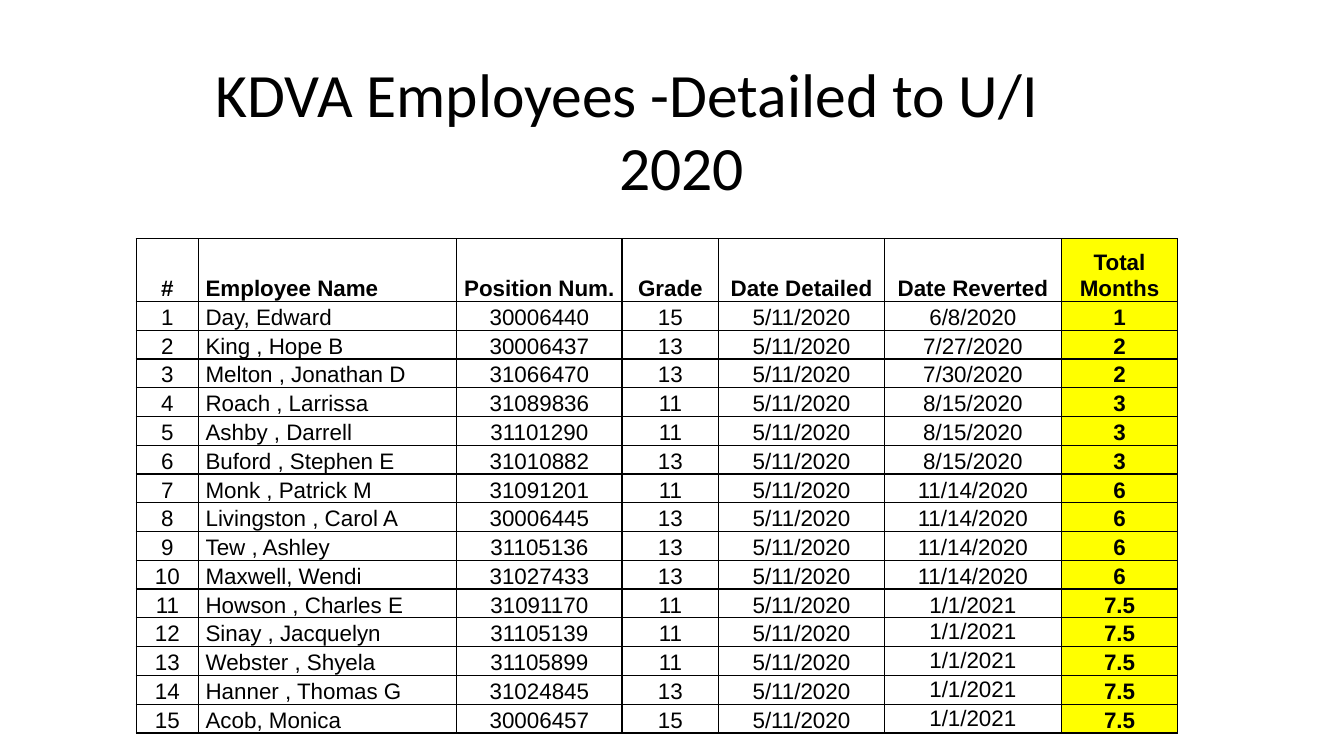
from lxml import etree
from pptx import Presentation
from pptx.dml.color import RGBColor
from pptx.enum.text import MSO_ANCHOR, MSO_AUTO_SIZE, PP_ALIGN
from pptx.oxml.ns import qn
from pptx.util import Inches, Pt

LEFT, CENTER = PP_ALIGN.LEFT, PP_ALIGN.CENTER
TOP, BOTTOM = MSO_ANCHOR.TOP, MSO_ANCHOR.BOTTOM
FIT_SHAPE = MSO_AUTO_SIZE.SHAPE_TO_FIT_TEXT
COLORS = {"text": "000000", "border": "000000", "highlight": "FFFF00"}

HEADERS = ["#", "Employee Name", "Position Num.", "Grade", "Date Detailed",
           "Date Reverted", "Total Months"]
COLUMN_WIDTHS = [0.62, 2.56, 1.64, 0.96, 1.64, 1.76, 1.15]
HEADER_HEIGHT, ROW_HEIGHT = 0.62, 0.28
NAME, REVERTED, MONTHS = 1, 5, 6
FIRST_TOP_ANCHORED_ROW = 12
DATE_DETAILED = "5/11/2020"
EMPLOYEES = [
    ("Day, Edward", "30006440", "15", "6/8/2020", "1"),
    ("King , Hope B", "30006437", "13", "7/27/2020", "2"),
    ("Melton , Jonathan D", "31066470", "13", "7/30/2020", "2"),
    ("Roach , Larrissa", "31089836", "11", "8/15/2020", "3"),
    ("Ashby , Darrell", "31101290", "11", "8/15/2020", "3"),
    ("Buford , Stephen E", "31010882", "13", "8/15/2020", "3"),
    ("Monk , Patrick M", "31091201", "11", "11/14/2020", "6"),
    ("Livingston , Carol A", "30006445", "13", "11/14/2020", "6"),
    ("Tew , Ashley", "31105136", "13", "11/14/2020", "6"),
    ("Maxwell, Wendi", "31027433", "13", "11/14/2020", "6"),
    ("Howson , Charles E", "31091170", "11", "1/1/2021", "7.5"),
    ("Sinay , Jacquelyn", "31105139", "11", "1/1/2021", "7.5"),
    ("Webster , Shyela", "31105899", "11", "1/1/2021", "7.5"),
    ("Hanner , Thomas G", "31024845", "13", "1/1/2021", "7.5"),
    ("Acob, Monica", "30006457", "15", "1/1/2021", "7.5"),
]


def format_font(font, name, size, bold):
    values = {"name": name, "size": Pt(size), "bold": bold}
    for attribute, value in values.items():
        setattr(font, attribute, value)
    font.color.rgb = RGBColor.from_string(COLORS["text"])


def add_borders(cell):
    properties = cell._tc.get_or_add_tcPr()
    for position, side in enumerate(["lnL", "lnR", "lnT", "lnB"]):
        line = etree.Element(qn(f"a:{side}"), w=str(Pt(1)))
        fill = etree.SubElement(line, qn("a:solidFill"))
        etree.SubElement(fill, qn("a:srgbClr"), val=COLORS["border"])
        properties.insert(position, line)


deck = Presentation()
deck.slide_width, deck.slide_height = Inches(13.33), Inches(7.5)
slide = deck.slides.add_slide(deck.slide_layouts[5])

# Title
title = slide.shapes.title
title.left, title.top = Inches(2.04), Inches(0.5)
title.width, title.height = Inches(10.36), Inches(1.58)
frame = title.text_frame
frame.text = "KDVA Employees -Detailed to U/I\n2020"
frame_format = {"word_wrap": True, "auto_size": FIT_SHAPE, "vertical_anchor": TOP}
for attribute, value in frame_format.items():
    setattr(frame, attribute, value)
for para in frame.paragraphs:
    para.alignment = LEFT
    format_font(para.runs[0].font, "Calibri", 44, False)
year = frame.paragraphs[1]
year._p.get_or_add_pPr().set("marL", str(Inches(4)))

# Employee table
rows = [HEADERS]
for number, (name, position, grade, reverted, months) in enumerate(EMPLOYEES, 1):
    rows.append([str(number), name, position, grade, DATE_DETAILED, reverted, months])
table_height = HEADER_HEIGHT + ROW_HEIGHT * len(EMPLOYEES)
table = slide.shapes.add_table(
    len(rows), len(HEADERS), Inches(1.35), Inches(2.37),
    Inches(sum(COLUMN_WIDTHS)), Inches(table_height)).table
table.first_row = table.horz_banding = False
for column, width in zip(table.columns, COLUMN_WIDTHS):
    column.width = Inches(width)

for row_index, values in enumerate(rows):
    is_header = row_index == 0
    table.rows[row_index].height = Inches(HEADER_HEIGHT if is_header else ROW_HEIGHT)
    for column_index, value in enumerate(values):
        cell = table.cell(row_index, column_index)
        cell.text = value
        at_top = column_index == REVERTED and row_index >= FIRST_TOP_ANCHORED_ROW
        cell_format = {
            "margin_left": Inches(0.07), "margin_right": Inches(0.07),
            "margin_top": 0, "margin_bottom": 0,
            "vertical_anchor": TOP if at_top else BOTTOM,
        }
        for attribute, setting in cell_format.items():
            setattr(cell, attribute, setting)
        if column_index == MONTHS:
            cell.fill.solid()
            cell.fill.fore_color.rgb = RGBColor.from_string(COLORS["highlight"])
        else:
            cell.fill.background()
        add_borders(cell)
        para = cell.text_frame.paragraphs[0]
        para.alignment = LEFT if column_index == NAME else CENTER
        para.line_spacing = 1.07
        format_font(para.runs[0].font, "Arial", 16, is_header or column_index == MONTHS)

deck.save("out.pptx")
